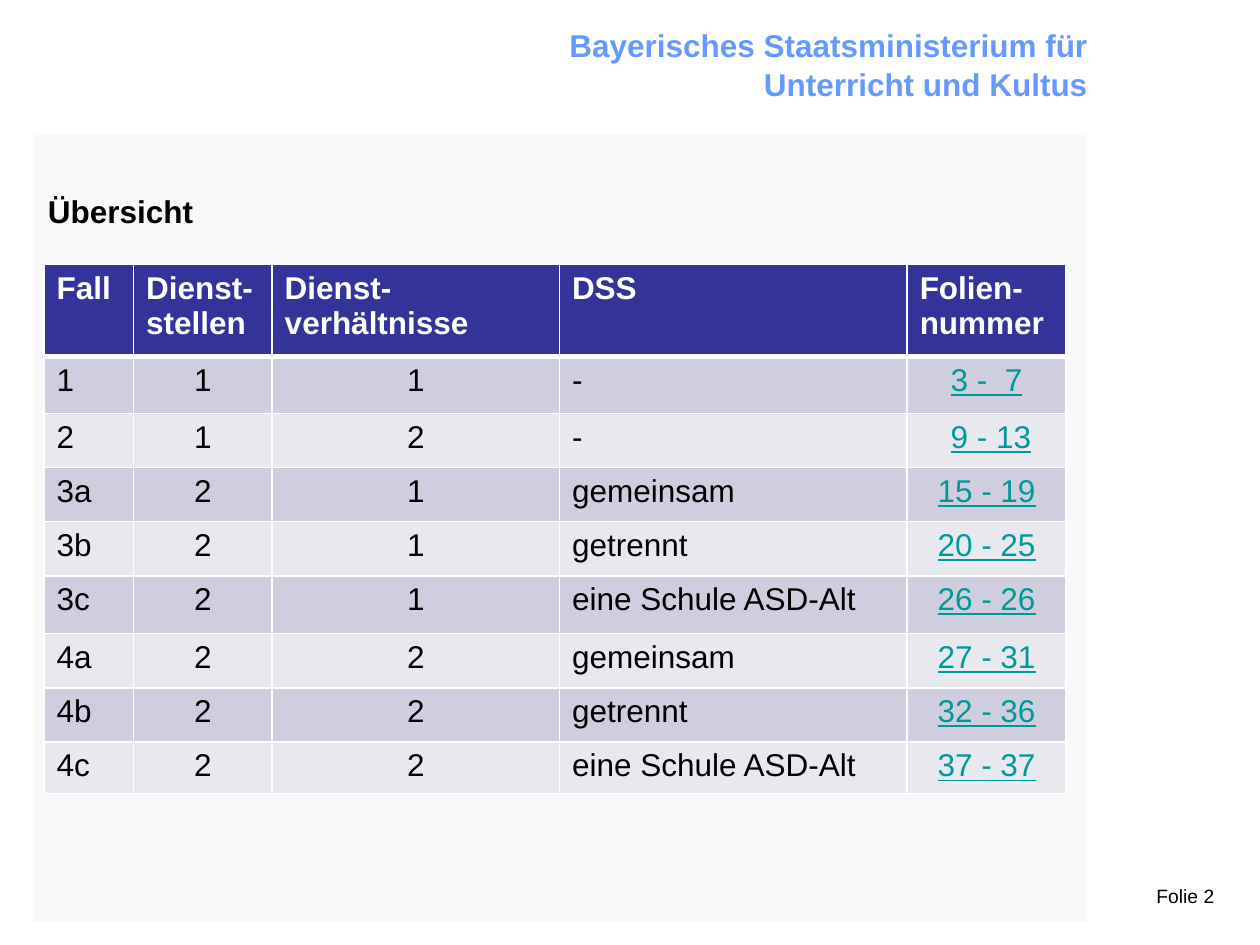
from dataclasses import dataclass

from lxml import etree
from pptx import Presentation
from pptx.dml.color import RGBColor
from pptx.enum import shapes, text
from pptx.oxml import ns
from pptx.util import Inches, Pt


@dataclass(frozen=True)
class Theme:
    font: str = "Arial"
    body: int = 18
    small: int = 11
    ink: str = "000000"
    white: str = "FFFFFF"
    panel: str = "F8F8F8"
    letterhead: str = "6699FF"
    header: str = "333399"
    bands: tuple = ("CECEDE", "E8E8EF")
    link: str = "009999"
    rule: int = 1
    header_rule: int = 3


THEME = Theme()
LEFT, CENTER, RIGHT = text.PP_ALIGN.LEFT, text.PP_ALIGN.CENTER, text.PP_ALIGN.RIGHT

LETTERHEAD = ["Bayerisches Staatsministerium für", "Unterricht und Kultus"]
HEADING = "Übersicht"
FOOTER = "Folie 2"

COLUMNS = [  # heading, width, alignment of the values
    ("Fall", 0.71, LEFT),
    ("Dienst-stellen", 1.1, CENTER),
    ("Dienst-verhältnisse", 2.28, CENTER),
    ("DSS", 2.76, LEFT),
    ("Folien-nummer", 1.26, CENTER),
]
CASES = [
    ("1", "1", "1", "-", "3 -  7"),
    ("2", "1", "2", "-", " 9 - 13"),
    ("3a", "2", "1", "gemeinsam", "15 - 19"),
    ("3b", "2", "1", "getrennt", "20 - 25"),
    ("3c", "2", "1", "eine Schule ASD-Alt", "26 - 26"),
    ("4a", "2", "2", "gemeinsam", "27 - 31"),
    ("4b", "2", "2", "getrennt", "32 - 36"),
    ("4c", "2", "2", "eine Schule ASD-Alt", "37 - 37"),
]
ROW_HEIGHTS = [0.73, 0.45, 0.43, 0.43, 0.43, 0.46, 0.43, 0.43, 0.41]


def rgb(value):
    return RGBColor.from_string(value)


def add_span(para, words, color=THEME.ink, size=THEME.body, bold=False, underline=False):
    span = para.add_run()
    span.text = words
    font = span.font
    font.name, font.size = THEME.font, Pt(size)
    font.bold, font.underline = bold, underline
    font.color.rgb = rgb(color)


def prepare_frame(box):
    """Set wrapping and top anchoring, and return the first paragraph."""
    frame = box.text_frame
    frame.word_wrap = True
    frame.auto_size = text.MSO_AUTO_SIZE.NONE
    frame.vertical_anchor = text.MSO_ANCHOR.TOP
    return frame.paragraphs[0]


def add_text_box(page, *place):
    return prepare_frame(page.shapes.add_textbox(*map(Inches, place)))


def set_borders(cell, **widths):
    """Draw white cell borders; widths in points, by side."""
    props = cell._tc.get_or_add_tcPr()
    for side, width in widths.items():
        line = etree.SubElement(props, ns.qn(f"a:ln{side}"), w=str(Pt(width)))
        fill = etree.SubElement(line, ns.qn("a:solidFill"))
        etree.SubElement(fill, ns.qn("a:srgbClr"), val=THEME.white)


def add_panel(page):
    panel = page.shapes.add_shape(
        shapes.MSO_SHAPE.RECTANGLE, *map(Inches, (0.27, 1.07, 8.35, 6.25)))
    panel.shadow.inherit = False
    panel.fill.solid()
    panel.fill.fore_color.rgb = rgb(THEME.panel)
    panel.line.fill.background()


def add_letterhead(page):
    para = add_text_box(page, 3.04, 0.14, 5.69, 0.71)
    para.alignment = RIGHT
    para.line_spacing = 1.05
    for index, words in enumerate(LETTERHEAD):
        if index:
            para.add_line_break()
        add_span(para, words, THEME.letterhead, bold=True)


def add_case_table(page):
    rows = [[heading for heading, _, _ in COLUMNS], *CASES]
    widths = [width for _, width, _ in COLUMNS]
    table = page.shapes.add_table(
        len(rows), len(COLUMNS),
        *map(Inches, (0.35, 2.1, sum(widths), sum(ROW_HEIGHTS)))).table
    table.horz_banding = False
    for column, width in zip(table.columns, widths):
        column.width = Inches(width)
    for row, height in zip(table.rows, ROW_HEIGHTS):
        row.height = Inches(height)

    for r, values in enumerate(rows):
        for c, value in enumerate(values):
            cell = table.cell(r, c)
            is_header = r == 0
            set_borders(cell, L=THEME.rule, R=THEME.rule,
                        T=THEME.header_rule if r == 1 else THEME.rule,
                        B=THEME.header_rule if is_header else THEME.rule)
            cell.fill.solid()
            cell.fill.fore_color.rgb = rgb(THEME.header if is_header else THEME.bands[(r - 1) % 2])
            para = cell.text_frame.paragraphs[0]
            para.alignment = LEFT if is_header else COLUMNS[c][2]
            if is_header:
                add_span(para, value, THEME.white, bold=True)
            elif c == len(COLUMNS) - 1:
                if value.startswith(" "):
                    add_span(para, " ")
                add_span(para, value.lstrip(), THEME.link, underline=True)
            else:
                add_span(para, value)


def place_heading(page):
    title = page.shapes.title
    title.left, title.top, title.width, title.height = map(Inches, (0.28, 1.47, 7.24, 0.4))
    para = prepare_frame(title)
    para.alignment = LEFT
    add_span(para, HEADING, bold=True)
    page.shapes._spTree.append(title._element)  # in front of the panel


def main():
    deck = Presentation()
    deck.slide_width, deck.slide_height = Inches(10), Inches(7.5)
    page = deck.slides.add_slide(deck.slide_layouts.get_by_name("Title Only"))
    add_panel(page)
    add_letterhead(page)
    add_span(add_text_box(page, 9.08, 6.97, 0.96, 0.33), FOOTER, size=THEME.small)
    add_case_table(page)
    place_heading(page)
    deck.save("out.pptx")


if __name__ == "__main__":
    main()
